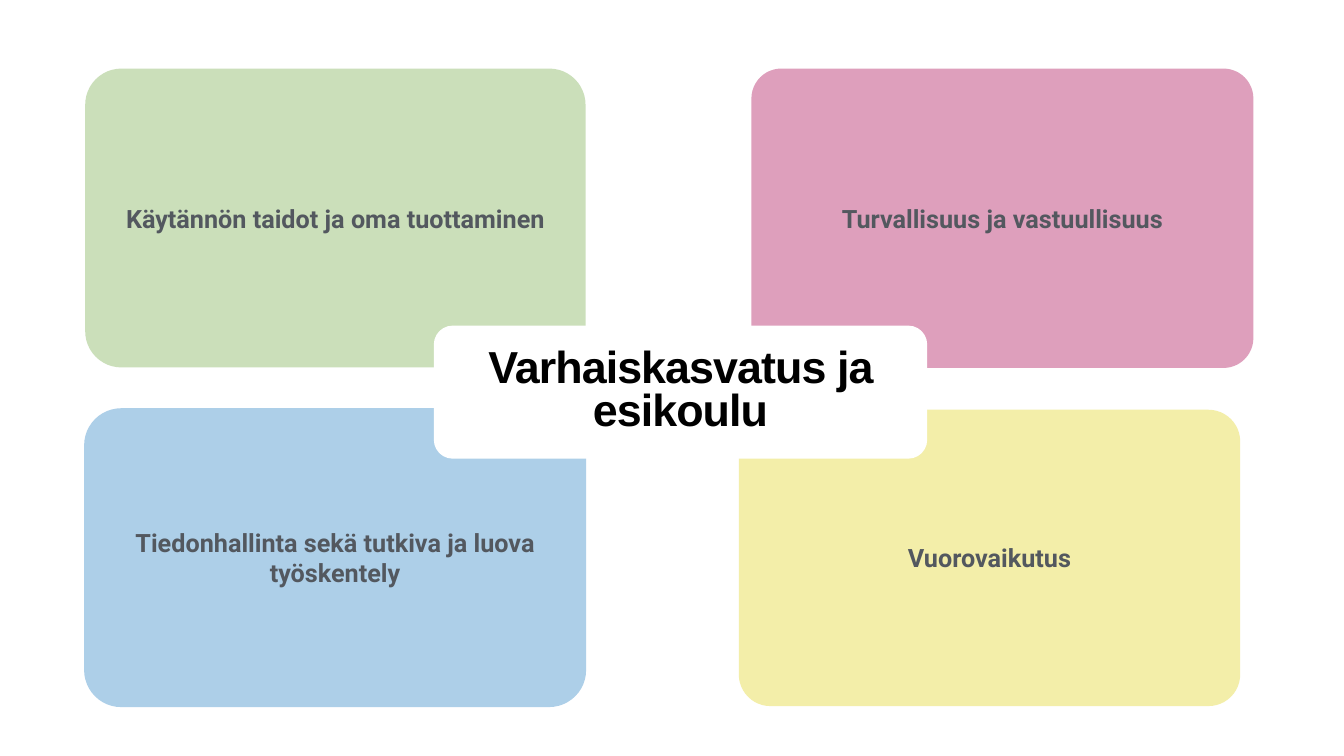
from dataclasses import dataclass

from pptx import Presentation
from pptx.dml.color import RGBColor as Rgb
from pptx.enum.shapes import MSO_SHAPE as Shape
from pptx.enum.text import MSO_ANCHOR as Anchor, PP_ALIGN as Align
from pptx.util import Inches, Pt


@dataclass(frozen=True)
class Theme:
    green: str = "CBDFBA"
    blue: str = "ADCFE8"
    yellow: str = "F3EEA9"
    pink: str = "DE9FBC"
    white: str = "FFFFFF"
    grey: str = "53585F"
    black: str = "000000"
    body: str = "Roboto"
    head: str = "Arial"
    small: int = 36
    large: int = 64
    pad: float = 0.06


THEME = Theme()
WIDE, HIGH = Inches(26.67), Inches(15)

# Boxes are left, top, width, height in percent of the slide.
CARDS = [
    ((6.34, 9.07, 37.23, 39.53), 0.121, THEME.green,
     "Käytännön taidot ja oma tuottaminen"),
    ((6.26, 54, 37.35, 39.53), 0.124, THEME.blue,
     "Tiedonhallinta sekä tutkiva ja luova työskentely"),
    ((54.97, 54.2, 37.31, 39.2), 0.107, THEME.yellow, "Vuorovaikutus"),
    ((55.91, 9.07, 37.35, 39.6), 0.1, THEME.pink,
     "Turvallisuus ja vastuullisuus"),
]
TITLE = ((32.28, 43.07, 36.71, 17.6), 0.142, THEME.white,
         "Varhaiskasvatus ja esikoulu")


def scale(box):
    """Turn a box in percent into slide lengths."""
    return [round(part * full / 100)
            for part, full in zip(box, (WIDE, HIGH) * 2)]


def add_panel(slide, box, bend, fill, text, face, size, ink):
    """Add a rounded panel with centred bold text; return its paragraph."""
    panel = slide.shapes.add_shape(Shape.ROUNDED_RECTANGLE, *scale(box))
    panel.adjustments[0] = bend
    panel.shadow.inherit = False
    panel.fill.solid()
    panel.fill.fore_color.rgb = Rgb.from_string(fill)
    panel.line.fill.background()

    frame = panel.text_frame
    frame.word_wrap = True
    frame.vertical_anchor = Anchor.MIDDLE
    frame.margin_left = frame.margin_right = Inches(THEME.pad)
    frame.margin_top = frame.margin_bottom = Inches(THEME.pad)
    para = frame.paragraphs[0]
    para.alignment = Align.CENTER
    run = para.add_run()
    run.text = text
    run.font.name = face
    run.font.size = Pt(size)
    run.font.bold = True
    run.font.color.rgb = Rgb.from_string(ink)
    return para


def add_card(slide, box, bend, fill, text):
    add_panel(slide, box, bend, fill, text,
              THEME.body, THEME.small, THEME.grey)


def add_title(slide, box, bend, fill, text):
    para = add_panel(slide, box, bend, fill, text,
                     THEME.head, THEME.large, THEME.black)
    para.line_spacing = 0.8
    para.runs[0]._r.get_or_add_rPr().set("spc", "-130")


def main():
    deck = Presentation()
    deck.slide_width, deck.slide_height = WIDE, HIGH
    slide = deck.slides.add_slide(deck.slide_layouts[6])
    for card in CARDS:
        add_card(slide, *card)
    add_title(slide, *TITLE)
    deck.save("out.pptx")


if __name__ == "__main__":
    main()
